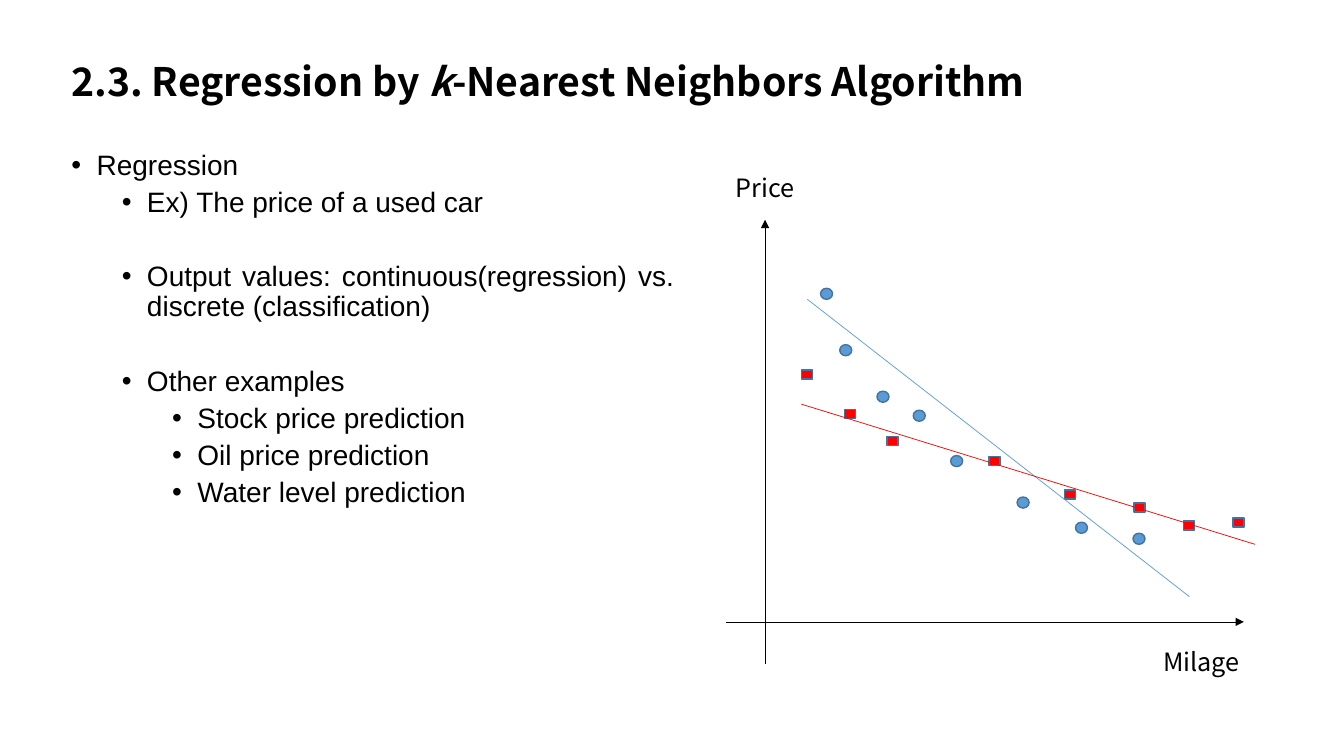
from dataclasses import dataclass

from lxml import etree
from pptx import Presentation
from pptx.dml.color import RGBColor
from pptx.enum.shapes import MSO_CONNECTOR, MSO_SHAPE
from pptx.enum.text import MSO_ANCHOR, PP_ALIGN
from pptx.oxml.ns import qn
from pptx.shapes.connector import Connector
from pptx.shapes.shapetree import GroupShapes, SlideShapes
from pptx.text.text import TextFrame, _Paragraph
from pptx.util import Pt

STRAIGHT = MSO_CONNECTOR.STRAIGHT
ELLIPSE, RECTANGLE = MSO_SHAPE.OVAL, MSO_SHAPE.RECTANGLE
MIDDLE, TOP = MSO_ANCHOR.MIDDLE, MSO_ANCHOR.TOP
LEFT, JUSTIFY = PP_ALIGN.LEFT, PP_ALIGN.JUSTIFY


@dataclass(frozen=True)
class Theme:
    ink: RGBColor = RGBColor(0x00, 0x00, 0x00)
    blue: RGBColor = RGBColor(0x5B, 0x9B, 0xD5)
    red: RGBColor = RGBColor(0xFF, 0x00, 0x00)
    outline: RGBColor = RGBColor(0x43, 0x73, 0x9E)
    heading_font: str = "Noto Sans CJK KR"
    body_font: str = "Arial"
    title_size: float = 28
    body_size: float = 20
    label_size: float = 18
    hairline: float = 0.5
    marker_line: float = 1
    line_spacing: float = 0.9


THEME = Theme()


@dataclass(frozen=True)
class Box:
    left: float
    top: float
    width: float
    height: float


@dataclass(frozen=True)
class Bullet:
    text: str
    level: int
    space_before: float = 5
    align: PP_ALIGN = JUSTIFY


@dataclass(frozen=True)
class Series:
    shape: MSO_SHAPE
    color: RGBColor
    width: float
    height: float
    corners: tuple[tuple[float, float], ...]


@dataclass(frozen=True)
class Line:
    start: tuple[float, float]
    end: tuple[float, float]
    color: RGBColor
    arrow: bool = False


@dataclass(frozen=True)
class Label:
    text: str
    box: Box


SECTION_GAP = 31.4
INDENT_STEP, HANGING = 36, 18

TITLE_BOX = Box(43.9, 37.4, 828, 44.6)
TITLE_SPANS = (
    ("2.3. Regression by ", False),
    ("k", True),
    ("-Nearest Neighbors Algorithm", False),
)
BODY_BOX = Box(43.9, 104.4, 445, 398.2)
BULLETS = (
    Bullet("Regression", 0, 10, LEFT),
    Bullet("Ex) The price of a used car", 1, align=LEFT),
    Bullet("Output values: continuous(regression) vs. discrete (classification)",
           1, SECTION_GAP),
    Bullet("Other examples", 1, SECTION_GAP),
    Bullet("Stock price prediction", 2),
    Bullet("Oil price prediction", 2),
    Bullet("Water level prediction", 2),
)
SERIES = (
    Series(ELLIPSE, THEME.blue, 8.6, 7.9, (
        (586.1, 205.9), (599.8, 246.2), (626.4, 279.4), (652.3, 293),
        (679, 325.4), (726.5, 355), (768.2, 373), (809.3, 380.9))),
    Series(RECTANGLE, THEME.red, 7.9, 6.5, (
        (572.4, 264.2), (603.4, 292.3), (633.6, 311.8), (706.3, 326.2),
        (760.3, 349.9), (810, 359.3), (845.3, 372.2), (880.6, 370.1))),
)
LINES = (
    Line((518.4, 444.2), (888.5, 444.2), THEME.ink, arrow=True),
    Line((546.5, 474.5), (546.5, 157), THEME.ink, arrow=True),
    Line((576.7, 213.8), (849.6, 426.2), THEME.blue),
    Line((572.4, 288.7), (896.4, 388.8), THEME.red),
)
LABELS = (
    Label("Price", Box(518.4, 119.5, 103, 28.8)),
    Label("Milage", Box(823.7, 457.9, 92.9, 28.8)),
)


def add_text_box(shapes: SlideShapes | GroupShapes, box: Box,
                 anchor: MSO_ANCHOR = TOP) -> TextFrame:
    frame = shapes.add_textbox(Pt(box.left), Pt(box.top),
                               Pt(box.width), Pt(box.height)).text_frame
    frame.word_wrap = True
    frame.vertical_anchor = anchor
    return frame


def add_span(para: _Paragraph, text: str, font: str, size: float,
             bold: bool = False, italic: bool = False) -> None:
    span = para.add_run()
    span.text = text
    span.font.name = font
    span.font.size = Pt(size)
    span.font.bold = bold
    span.font.italic = italic
    span.font.color.rgb = THEME.ink


def set_bullet(para: _Paragraph, level: int) -> None:
    """Give the paragraph a hanging round bullet, indented by its level."""
    properties = para._p.get_or_add_pPr()
    properties.set("marL", str(Pt(HANGING + level * INDENT_STEP)))
    properties.set("indent", str(-Pt(HANGING)))
    etree.SubElement(properties, qn("a:buFont")).set("typeface", THEME.body_font)
    etree.SubElement(properties, qn("a:buChar")).set("char", "•")


def add_title(shapes: SlideShapes) -> None:
    para = add_text_box(shapes, TITLE_BOX, MIDDLE).paragraphs[0]
    para.line_spacing = THEME.line_spacing
    for text, italic in TITLE_SPANS:
        add_span(para, text, THEME.heading_font, THEME.title_size, True, italic)


def add_bullets(shapes: SlideShapes) -> None:
    frame = add_text_box(shapes, BODY_BOX)
    for index, bullet in enumerate(BULLETS):
        para = frame.add_paragraph() if index else frame.paragraphs[0]
        para.level = bullet.level
        para.alignment = bullet.align
        para.line_spacing = THEME.line_spacing
        para.space_before = Pt(bullet.space_before)
        set_bullet(para, bullet.level)
        add_span(para, bullet.text, THEME.body_font, THEME.body_size)


def add_markers(shapes: GroupShapes, series: Series) -> None:
    for left, top in series.corners:
        marker = shapes.add_shape(series.shape, Pt(left), Pt(top),
                                  Pt(series.width), Pt(series.height))
        marker.shadow.inherit = False
        marker.fill.solid()
        marker.fill.fore_color.rgb = series.color
        marker.line.color.rgb = THEME.outline
        marker.line.width = Pt(THEME.marker_line)


def add_line(shapes: GroupShapes, line: Line) -> None:
    connector: Connector = shapes.add_connector(
        STRAIGHT, *(Pt(value) for value in line.start + line.end))
    connector.line.color.rgb = line.color
    connector.line.width = Pt(THEME.hairline)
    if line.arrow:
        stroke = connector.line._get_or_add_ln()
        etree.SubElement(stroke, qn("a:tailEnd")).set("type", "triangle")
    etree.SubElement(connector._element.spPr, qn("a:effectLst"))


def add_scatter_sketch(shapes: SlideShapes) -> None:
    sketch = shapes.add_group_shape().shapes
    for series in SERIES:
        add_markers(sketch, series)
    for line in LINES:
        add_line(sketch, line)
    for label in LABELS:
        para = add_text_box(sketch, label.box).paragraphs[0]
        add_span(para, label.text, THEME.heading_font, THEME.label_size)


def main() -> None:
    deck = Presentation()
    deck.slide_width, deck.slide_height = Pt(960), Pt(540)
    page = deck.slides.add_slide(deck.slide_layouts[6])
    add_title(page.shapes)
    add_bullets(page.shapes)
    add_scatter_sketch(page.shapes)
    deck.save("out.pptx")


if __name__ == "__main__":
    main()
